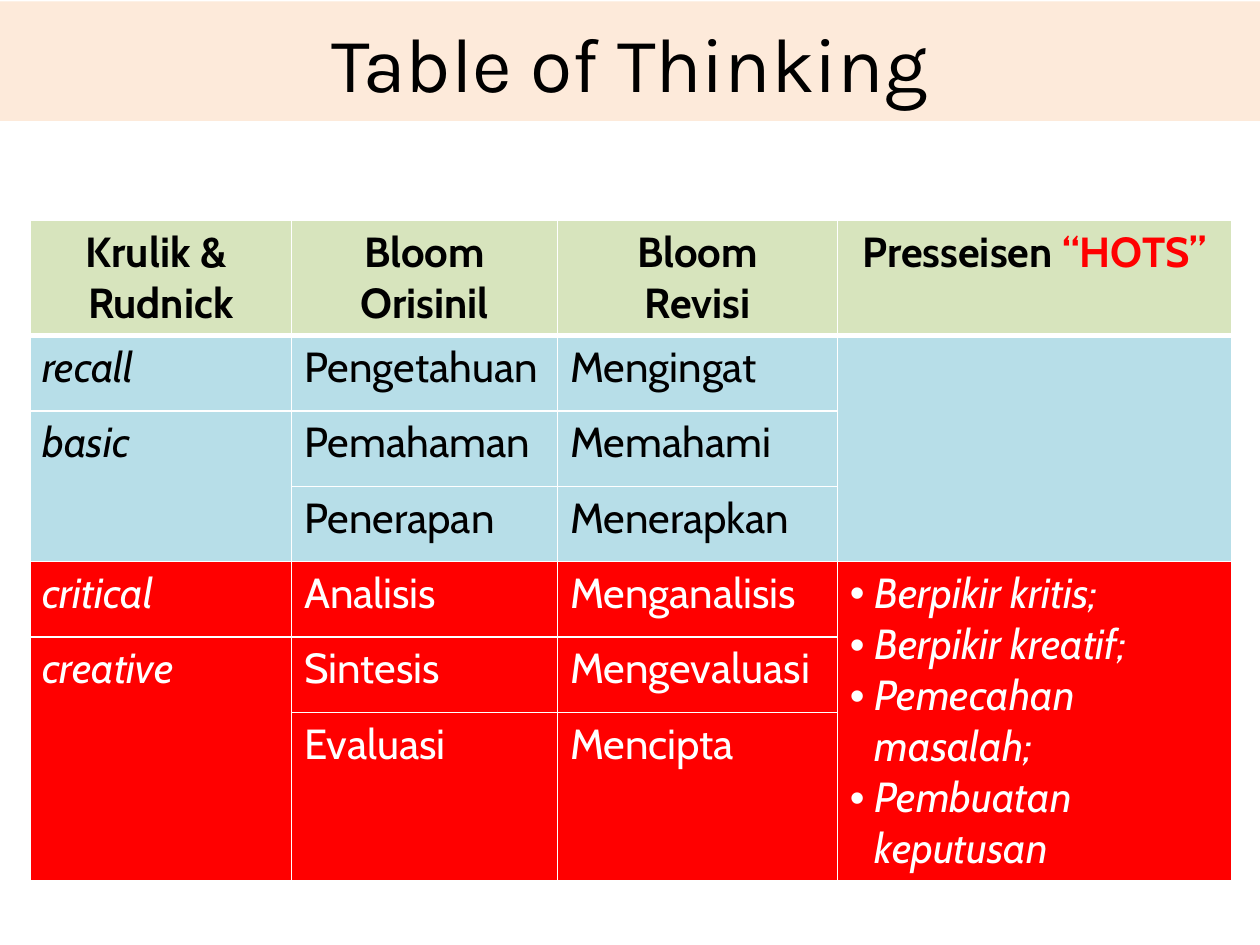
from dataclasses import dataclass

from lxml import etree
from pptx import Presentation
from pptx.dml.color import RGBColor
from pptx.enum import shapes, text
from pptx.oxml import ns
from pptx.util import Cm, Pt


@dataclass(frozen=True)
class Theme:
    title_font: str = "Karla"
    body_font: str = "Cabin"
    title_size: int = 44
    body_size: int = 24
    banner: str = "FDEADA"
    header: str = "D7E4BD"
    lower: str = "B7DEE8"
    higher: str = "FF0000"
    dark: str = "000000"
    light: str = "FFFFFF"


@dataclass(frozen=True)
class Entry:
    """One table cell; lines are paragraphs, and accent ends the last one."""
    row: int
    column: int
    lines: tuple[str, ...] = ()
    rows: int = 1
    accent: str = ""
    bullets: bool = False


THEME = Theme()
COLUMN_WIDTHS = (5.28, 5.36, 5.64, 7.95)
ROW_COUNT, ROW_HEIGHT = 7, 1.52
FIRST_HIGHER_ROW = 4
BULLET_INDENT = Cm(0.5)

ORIGINAL_LEVELS = ("Pengetahuan", "Pemahaman", "Penerapan",
                   "Analisis", "Sintesis", "Evaluasi")
REVISED_LEVELS = ("Mengingat", "Memahami", "Menerapkan",
                  "Menganalisis", "Mengevaluasi", "Mencipta")
ENTRIES = [
    Entry(0, 0, ("Krulik & ", "Rudnick")),
    Entry(0, 1, ("Bloom", "Orisinil")),
    Entry(0, 2, ("Bloom", "Revisi")),
    Entry(0, 3, ("Presseisen ",), accent="“HOTS”"),
    Entry(1, 0, ("recall",)),
    Entry(2, 0, ("basic",), rows=2),
    Entry(4, 0, ("critical",)),
    Entry(5, 0, ("creative",), rows=2),
    Entry(1, 3, rows=3),
    Entry(4, 3, ("Berpikir kritis;", "Berpikir kreatif;", "Pemecahan masalah;",
                 "Pembuatan keputusan"), rows=3, bullets=True),
    *(Entry(row, column, (level,))
      for column, levels in ((1, ORIGINAL_LEVELS), (2, REVISED_LEVELS))
      for row, level in enumerate(levels, start=1)),
]


def add_text(para, wording: str, *, font: str = THEME.body_font,
             size: int = THEME.body_size, color: str = THEME.dark,
             bold: bool = False, italic: bool = False) -> None:
    span = para.add_run()
    span.text = wording
    span.font.name, span.font.size = font, Pt(size)
    span.font.bold, span.font.italic = bold, italic
    span.font.color.rgb = RGBColor.from_string(color)


def add_bullet(para) -> None:
    properties = para._p.get_or_add_pPr()
    properties.set("marL", str(BULLET_INDENT))
    properties.set("indent", str(-BULLET_INDENT))
    etree.SubElement(properties, ns.qn("a:buFont")).set("typeface", "Arial")
    etree.SubElement(properties, ns.qn("a:buChar")).set("char", "•")


def add_borders(cell, row: int) -> None:
    """Thin white rules, with a thick one under the header row."""
    widths = {"lnL": 1, "lnR": 1, "lnT": 3 if row == 1 else 1,
              "lnB": 3 if row == 0 else 1}
    properties = cell._tc.get_or_add_tcPr()
    for side, width in widths.items():
        line = etree.SubElement(properties, ns.qn(f"a:{side}"), w=str(Pt(width)))
        fill = etree.SubElement(line, ns.qn("a:solidFill"))
        etree.SubElement(fill, ns.qn("a:srgbClr"), val=THEME.light)


def row_fill(row: int) -> str:
    if row == 0:
        return THEME.header
    return THEME.lower if row < FIRST_HIGHER_ROW else THEME.higher


def fill_entry(table, entry: Entry) -> None:
    cell = table.cell(entry.row, entry.column)
    if entry.rows > 1:
        cell.merge(table.cell(entry.row + entry.rows - 1, entry.column))
    is_header = entry.row == 0
    look = {
        "bold": is_header,
        "italic": not is_header and entry.column in (0, 3),
        "color": THEME.light if entry.row >= FIRST_HIGHER_ROW else THEME.dark,
    }
    frame = cell.text_frame
    for index, line in enumerate(entry.lines):
        para = frame.add_paragraph() if index else frame.paragraphs[0]
        if is_header:
            para.alignment = text.PP_ALIGN.CENTER
        if entry.bullets:
            add_bullet(para)
        add_text(para, line, **look)
    if entry.accent:
        add_text(frame.paragraphs[-1], entry.accent,
                 **{**look, "color": THEME.higher})


def add_title(page, wording: str) -> None:
    box = page.shapes.add_shape(shapes.MSO_SHAPE.RECTANGLE,
                                Cm(0), Cm(0.03), Cm(25.4), Cm(2.41))
    box.shadow.inherit = False
    box.fill.solid()
    box.fill.fore_color.rgb = RGBColor.from_string(THEME.banner)
    box.line.fill.background()
    box.text_frame.word_wrap = True
    box.text_frame.vertical_anchor = text.MSO_ANCHOR.MIDDLE
    para = box.text_frame.paragraphs[0]
    para.alignment = text.PP_ALIGN.CENTER
    add_text(para, wording, font=THEME.title_font, size=THEME.title_size)


def add_thinking_table(page) -> None:
    table = page.shapes.add_table(
        ROW_COUNT, len(COLUMN_WIDTHS), Cm(0.6), Cm(4.45),
        Cm(sum(COLUMN_WIDTHS)), Cm(ROW_COUNT * ROW_HEIGHT)).table
    table.horz_banding = False
    for column, width in zip(table.columns, COLUMN_WIDTHS):
        column.width = Cm(width)
    for index, row in enumerate(table.rows):
        row.height = Cm(ROW_HEIGHT)
        for cell in row.cells:
            add_borders(cell, index)
            cell.fill.solid()
            cell.fill.fore_color.rgb = RGBColor.from_string(row_fill(index))
    for entry in ENTRIES:
        fill_entry(table, entry)


def main() -> None:
    deck = Presentation()
    deck.slide_width, deck.slide_height = Cm(25.4), Cm(19.05)
    page = deck.slides.add_slide(deck.slide_layouts[6])
    add_title(page, "Table of Thinking")
    add_thinking_table(page)
    deck.save("out.pptx")


if __name__ == "__main__":
    main()
